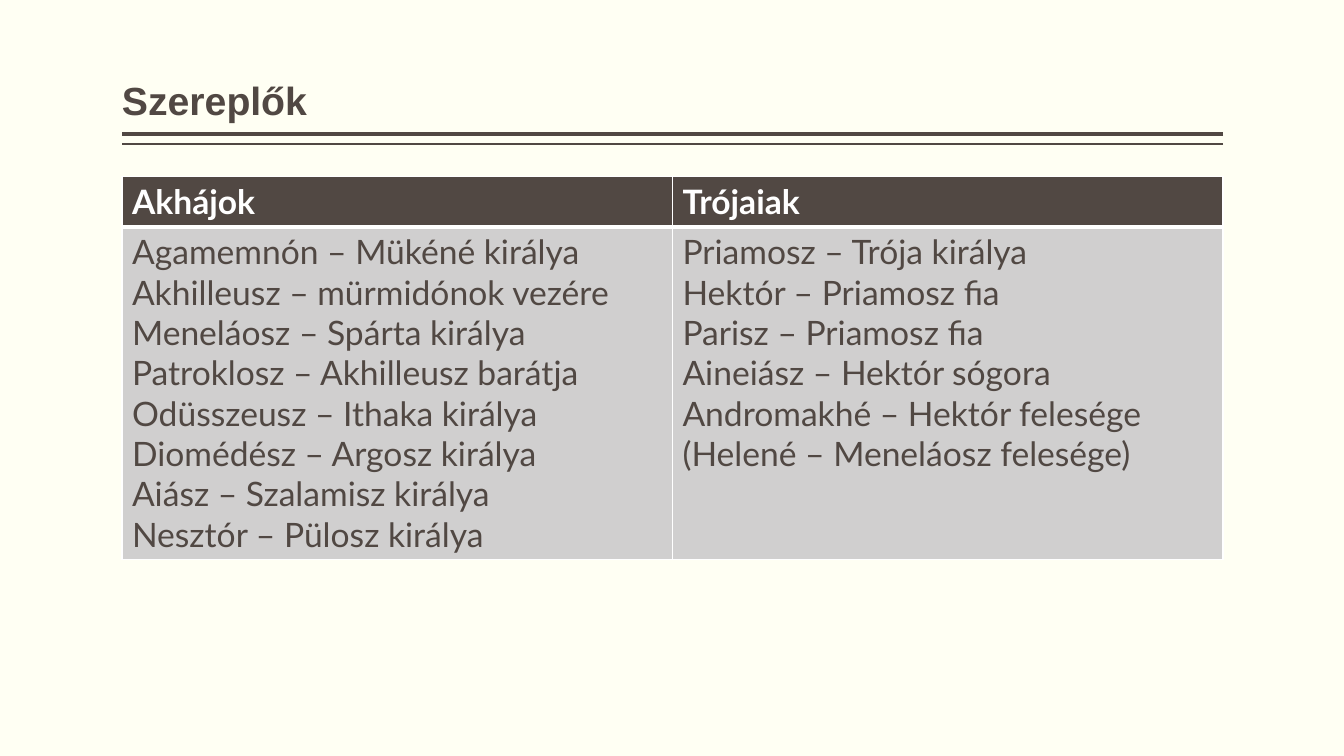
from dataclasses import dataclass

from lxml.etree import SubElement
from pptx import Presentation
from pptx.dml.color import RGBColor
from pptx.enum.shapes import MSO_CONNECTOR
from pptx.enum.text import MSO_ANCHOR
from pptx.oxml.ns import qn
from pptx.util import Inches, Pt

BROWN = "514843"
WHITE = "FFFFFF"
GRAY = "D0CFCF"
CREAM = "FFFFF3"
LEFT, WIDTH = 1.21, 10.92


@dataclass
class Rule:
    y: float
    weight: float


@dataclass
class Side:
    name: str
    characters: list[str]


@dataclass
class RowStyle:
    height: float
    fill: str
    color: str
    bold: bool
    borders: dict[str, float]


RULES = [Rule(1.33, 3), Rule(1.43, 1)]

SIDES = [
    Side("Akhájok", [
        "Agamemnón – Mükéné királya",
        "Akhilleusz – mürmidónok vezére",
        "Meneláosz – Spárta királya",
        "Patroklosz – Akhilleusz barátja",
        "Odüsszeusz – Ithaka királya",
        "Diomédész – Argosz királya",
        "Aiász – Szalamisz királya",
        "Nesztór – Pülosz királya",
    ]),
    Side("Trójaiak", [
        "Priamosz – Trója királya",
        "Hektór – Priamosz fia",
        "Parisz – Priamosz fia",
        "Aineiász – Hektór sógora",
        "Andromakhé – Hektór felesége",
        "(Helené – Meneláosz felesége)",
    ]),
]

ROW_STYLES = [
    RowStyle(0.5, BROWN, WHITE, True, {"L": 1, "R": 1, "T": 1, "B": 3}),
    RowStyle(3.3, GRAY, BROWN, False, {"L": 1, "R": 1, "T": 3, "B": 1}),
]


def rgb(value: str) -> RGBColor:
    return RGBColor.from_string(value)


def format_text(tf, font: str, size: float, color: str, bold: bool) -> None:
    for p in tf.paragraphs:
        for r in p.runs:
            r.font.name = font
            r.font.size = Pt(size)
            r.font.bold = bold
            r.font.color.rgb = rgb(color)


def add_rule(slide, rule: Rule) -> None:
    line = slide.shapes.add_connector(
        MSO_CONNECTOR.STRAIGHT,
        Inches(LEFT + WIDTH), Inches(rule.y), Inches(LEFT), Inches(rule.y),
    )
    line.line.color.rgb = rgb(BROWN)
    line.line.width = Pt(rule.weight)
    SubElement(line._element.spPr, qn("a:effectLst"))


def add_title(slide, text: str) -> None:
    sp = slide.shapes.add_textbox(
        Inches(LEFT), Inches(0.08), Inches(WIDTH), Inches(1.2)
    )
    tf = sp.text_frame
    tf.word_wrap = True
    tf.vertical_anchor = MSO_ANCHOR.BOTTOM
    tf.margin_left = tf.margin_right = 0
    tf.text = text
    tf.paragraphs[0].line_spacing = 0.9
    format_text(tf, "Arial", 28, BROWN, True)


def set_borders(cell, borders: dict[str, float]) -> None:
    tc_pr = cell._tc.get_or_add_tcPr()
    for edge, weight in borders.items():
        ln = SubElement(tc_pr, qn(f"a:ln{edge}"), w=str(Pt(weight)))
        fill = SubElement(ln, qn("a:solidFill"))
        SubElement(fill, qn("a:srgbClr"), val=WHITE)


def fill_cell(cell, text: str, style: RowStyle) -> None:
    set_borders(cell, style.borders)
    cell.fill.solid()
    cell.fill.fore_color.rgb = rgb(style.fill)
    cell.text_frame.text = text
    format_text(cell.text_frame, "Lato", 24, style.color, style.bold)


def add_sides_table(slide, sides: list[Side]) -> None:
    height = sum(style.height for style in ROW_STYLES)
    table = slide.shapes.add_table(
        len(ROW_STYLES), len(sides),
        Inches(LEFT), Inches(1.75), Inches(WIDTH), Inches(height),
    ).table
    for row, style in zip(table.rows, ROW_STYLES):
        row.height = Inches(style.height)
    for col, side in enumerate(sides):
        table.columns[col].width = Inches(WIDTH / len(sides))
        texts = [side.name, "\n".join(side.characters)]
        for row, (text, style) in enumerate(zip(texts, ROW_STYLES)):
            fill_cell(table.cell(row, col), text, style)


def main() -> None:
    prs = Presentation()
    prs.slide_width = Inches(13.33)
    prs.slide_height = Inches(7.5)
    slide = prs.slides.add_slide(prs.slide_layouts[6])
    slide.background.fill.solid()
    slide.background.fill.fore_color.rgb = rgb(CREAM)
    for rule in RULES:
        add_rule(slide, rule)
    add_title(slide, "Szereplők")
    add_sides_table(slide, SIDES)
    prs.save("out.pptx")


if __name__ == "__main__":
    main()
